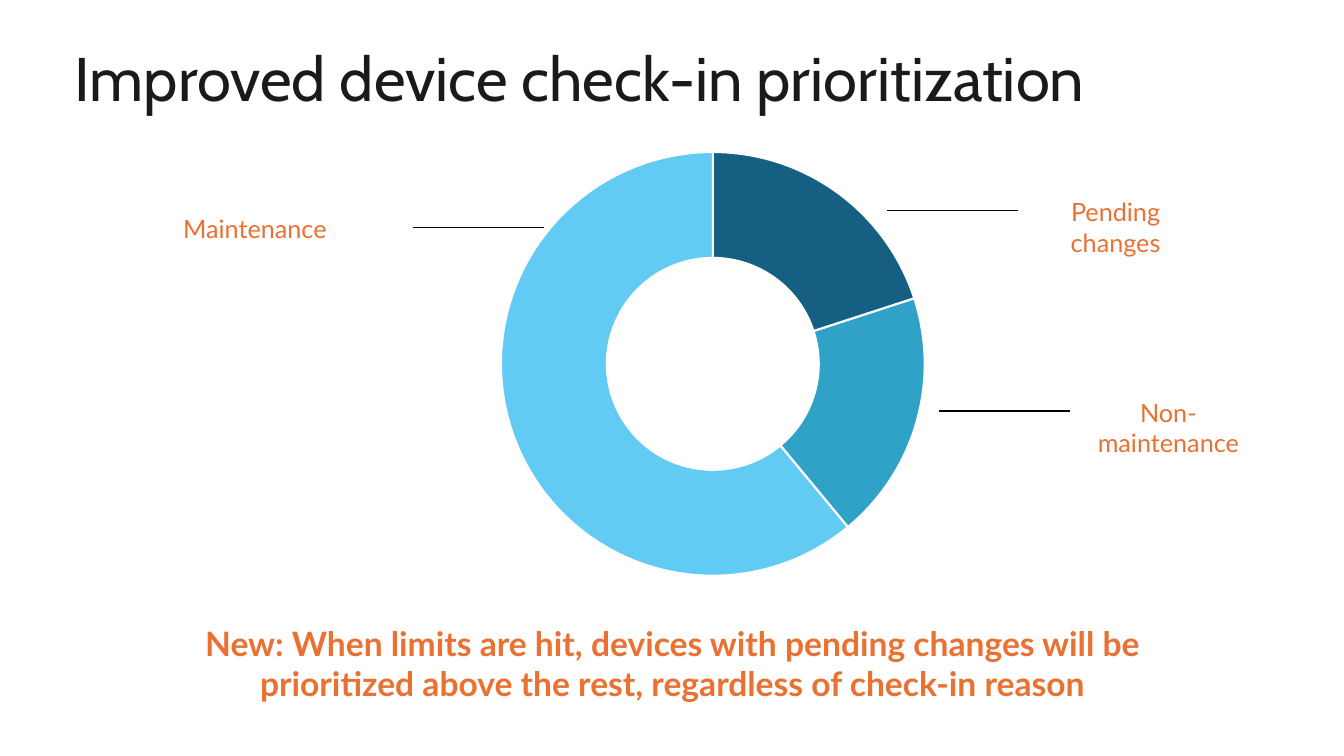
from lxml import etree
from pptx import Presentation
from pptx.chart.data import CategoryChartData
from pptx.dml.color import RGBColor
from pptx.enum.chart import XL_CHART_TYPE
from pptx.enum.shapes import MSO_CONNECTOR
from pptx.enum.text import MSO_ANCHOR, MSO_AUTO_SIZE, PP_ALIGN
from pptx.oxml.ns import qn
from pptx.util import Cm, Pt

DOUGHNUT = XL_CHART_TYPE.DOUGHNUT
STRAIGHT = MSO_CONNECTOR.STRAIGHT
MIDDLE = MSO_ANCHOR.MIDDLE
NO_AUTOFIT = MSO_AUTO_SIZE.NONE
LEFT, CENTER = PP_ALIGN.LEFT, PP_ALIGN.CENTER

COLORS = {
    "title": "1A1A1A",
    "accent": "E97132",
    "line": "000000",
    "gap": "FFFFFF",
    "pending": "156082",
    "non_maintenance": "30A2C7",
    "maintenance": "61CBF4",
}
HEADING_FONT, BODY_FONT = "Cabin", "Lato"
LEADER_LENGTH = 3.3
LEADER_DROP = 0.48


def color(name):
    """Return the named colour."""
    return RGBColor.from_string(COLORS[name])


def place(shape, box):
    """Move a shape to a box given in centimetres."""
    shape.left, shape.top, shape.width, shape.height = map(Cm, box)


def format_font(font, name, size, color_name, bold=False):
    """Set the face, size, colour and weight of a font."""
    font.name, font.size, font.bold = name, Pt(size), bold
    font.color.rgb = color(color_name)


def add_title(slide, box, text):
    """Fill and place the title placeholder."""
    title = slide.shapes.title
    place(title, box)
    frame = title.text_frame
    frame.text = text
    frame.auto_size, frame.vertical_anchor = NO_AUTOFIT, MIDDLE
    paragraph = frame.paragraphs[0]
    paragraph.alignment, paragraph.line_spacing = LEFT, 0.9
    format_font(paragraph.runs[0].font, HEADING_FONT, 44, "title")


def add_text(slide, box, text, size, bold=False):
    """Add a centred, wrapping text box in the accent colour."""
    frame = slide.shapes.add_textbox(*map(Cm, box)).text_frame
    frame.word_wrap = True
    frame.text = text
    paragraph = frame.paragraphs[0]
    paragraph.alignment = CENTER
    format_font(paragraph.runs[0].font, BODY_FONT, size, "accent", bold)


def add_callout(slide, box, text, leader_left):
    """Add a slice label with its horizontal leader line."""
    add_text(slide, box, text, 18)
    height = Cm(box[1] + LEADER_DROP)
    leader = slide.shapes.add_connector(
        STRAIGHT, Cm(leader_left), height, Cm(leader_left + LEADER_LENGTH), height)
    leader.line.color.rgb = color("line")
    leader.line.width = Pt(1)
    etree.SubElement(leader._element.spPr, qn("a:effectLst"))


def add_doughnut(slide, box):
    """Add the doughnut chart of check-in reasons."""
    data = CategoryChartData()
    data.categories = ["1", "2", "3"]
    data.add_series("Series 1", (20, 19, 61))
    chart = slide.shapes.add_chart(DOUGHNUT, *map(Cm, box), data).chart
    chart.has_legend = chart.has_title = False
    format_font(chart.font, BODY_FONT, 10, "line")
    plot = chart.plots[0]
    plot.vary_by_categories = True
    plot._element.find(qn("c:holeSize")).set("val", "70")
    for index, name in enumerate(("pending", "non_maintenance", "maintenance")):
        slice_format = plot.series[0].points[index].format
        slice_format.fill.solid()
        slice_format.fill.fore_color.rgb = color(name)
        slice_format.line.color.rgb = color("gap")
        slice_format.line.width = Pt(1.5)


def main():
    """Build and save the slide."""
    presentation = Presentation()
    presentation.slide_width, presentation.slide_height = Cm(33.87), Cm(19.05)
    slide = presentation.slides.add_slide(presentation.slide_layouts[5])
    add_title(slide, (1.63, 1.27, 30.61, 1.55), "Improved device check-in prioritization")
    add_doughnut(slide, (7.82, 3.48, 20.29, 11.38))
    add_callout(slide, (2.82, 5.26, 7.21, 1.02), "Maintenance", 10.41)
    add_callout(slide, (25.7, 4.83, 4.83, 1.8), "Pending changes", 22.35)
    add_callout(slide, (27.03, 9.88, 4.83, 1.8), "Non-maintenance", 23.67)
    add_text(
        slide, (3.43, 15.57, 27.03, 2.31),
        "New: When limits are hit, devices with pending changes will be "
        "prioritized above the rest, regardless of check-in reason", 24, bold=True)
    presentation.save("out.pptx")


if __name__ == "__main__":
    main()
